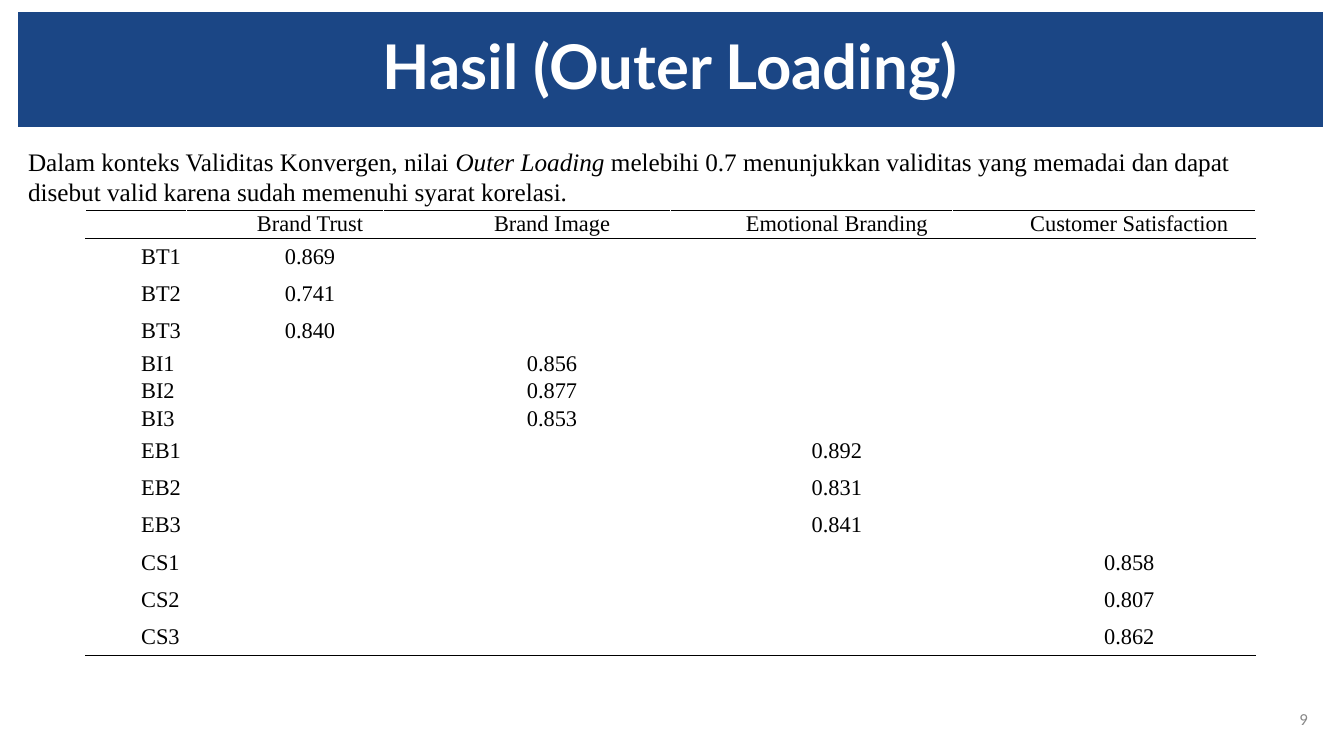
from lxml import etree
from pptx import Presentation
from pptx import util as u
from pptx.dml.color import RGBColor
from pptx.enum import text
from pptx.oxml import ns

SERIF = "Times New Roman"
HEADINGS = ["Brand Trust", "Brand Image", "Emotional Branding", "Customer Satisfaction"]
INDICATORS = [
    ("BT", 0.37, ["0.869", "0.741", "0.840"]),
    ("BI", 0.21, ["0.856", "0.877", "0.853"]),
    ("EB", 0.37, ["0.892", "0.831", "0.841"]),
    ("CS", 0.37, ["0.858", "0.807", "0.862"]),
]
COLUMN_WIDTHS = [1, 1.95, 2.85, 2.8, 3]


def color(value):
    """Turn a hex string into a colour."""
    return RGBColor.from_string(value)


def style(span, size, name, shade, bold=False, italic=False):
    """Format the font of one run."""
    font = span.font
    font.size, font.name = u.Pt(size), name
    font.bold, font.italic = bold, italic
    font.color.rgb = color(shade)


def add_title(page, box):
    """Place the title band."""
    title = page.shapes.title
    title.left, title.top, title.width, title.height = map(u.Inches, box)
    title.fill.solid()
    title.fill.fore_color.rgb = color("1B4685")
    frame = title.text_frame
    frame.text = "Hasil (Outer Loading)"
    frame.auto_size = text.MSO_AUTO_SIZE.NONE
    frame.vertical_anchor = text.MSO_ANCHOR.MIDDLE
    para = frame.paragraphs[0]
    para.alignment = text.PP_ALIGN.CENTER
    para.line_spacing = 0.9
    style(para.runs[0], 44, "Lato", "FFFFFF", bold=True)


def add_text(page, box):
    """Place a wrapping text box and return its frame."""
    frame = page.shapes.add_textbox(*map(u.Inches, box)).text_frame
    frame.word_wrap = True
    return frame


def add_summary(page, box):
    """Place the sentence above the table."""
    frame = add_text(page, box)
    frame.auto_size = text.MSO_AUTO_SIZE.SHAPE_TO_FIT_TEXT
    parts = [
        ("Dalam konteks Validitas Konvergen, nilai ", False),
        ("Outer Loading", True),
        (" melebihi 0.7 menunjukkan validitas yang memadai dan dapat disebut valid"
         " karena sudah memenuhi syarat korelasi.", False),
    ]
    for words, italic in parts:
        span = frame.paragraphs[0].add_run()
        span.text = words
        style(span, 18, SERIF, "000000", italic=italic)


def add_border(cell, side):
    """Draw a thin black line on one side of a cell."""
    line = etree.SubElement(cell._tc.get_or_add_tcPr(), ns.qn(f"a:{side}"), w=str(u.Pt(1)))
    fill = etree.SubElement(line, ns.qn("a:solidFill"))
    etree.SubElement(fill, ns.qn("a:srgbClr"), val="000000")


def fill_cell(cell, words, alignment):
    """Write and format one cell."""
    cell.margin_left = cell.margin_right = u.Inches(0.05)
    cell.margin_top = cell.margin_bottom = 0
    cell.vertical_anchor = text.MSO_ANCHOR.MIDDLE
    cell.fill.background()
    cell.text_frame.text = words
    para = cell.text_frame.paragraphs[0]
    para.alignment = alignment
    para._p.get_or_add_pPr().set("marL", str(u.Inches(0.5)))
    for span in para.runs:
        style(span, 16, SERIF, "000000")
    if not words:
        etree.SubElement(para._p, ns.qn("a:endParaRPr"), sz="1600")


def add_loadings(page, box):
    """Place the table of outer loadings."""
    rows, heights = [["", *HEADINGS]], [0.22]
    for column, (code, height, values) in enumerate(INDICATORS):
        for number, value in enumerate(values, 1):
            row = [f"{code}{number}", "", "", "", ""]
            row[column + 1] = value
            rows.append(row)
            heights.append(height)
    table = page.shapes.add_table(len(rows), len(COLUMN_WIDTHS), *map(u.Inches, box)).table
    table.first_row = table.horz_banding = False
    for column, width in zip(table.columns, COLUMN_WIDTHS):
        column.width = u.Inches(width)
    borders = {0: ["lnT", "lnB"], 1: ["lnT"], len(rows) - 1: ["lnB"]}
    for index, (row, height) in enumerate(zip(rows, heights)):
        table.rows[index].height = u.Inches(height)
        for column, words in enumerate(row):
            cell = table.cell(index, column)
            for side in borders.get(index, []):
                add_border(cell, side)
            fill_cell(cell, words, text.PP_ALIGN.CENTER if column else text.PP_ALIGN.LEFT)


def add_page_number(page, box):
    """Place the page number."""
    frame = add_text(page, box)
    frame.text = "9"
    frame.vertical_anchor = text.MSO_ANCHOR.MIDDLE
    para = frame.paragraphs[0]
    para.alignment = text.PP_ALIGN.RIGHT
    style(para.runs[0], 12, "Calibri", "888888")


def main():
    """Build and save the deck."""
    deck = Presentation()
    deck.slide_width, deck.slide_height = u.Inches(13.33), u.Inches(7.5)
    page = deck.slides.add_slide(deck.slide_layouts[5])
    add_title(page, (0.18, 0.12, 12.94, 1.14))
    add_loadings(page, (0.85, 2.09, 11.6, 4.18))
    add_summary(page, (0.18, 1.4, 12.5, 0.71))
    add_page_number(page, (12.5, 6.93, 0.57, 0.4))
    deck.save("out.pptx")


if __name__ == "__main__":
    main()
